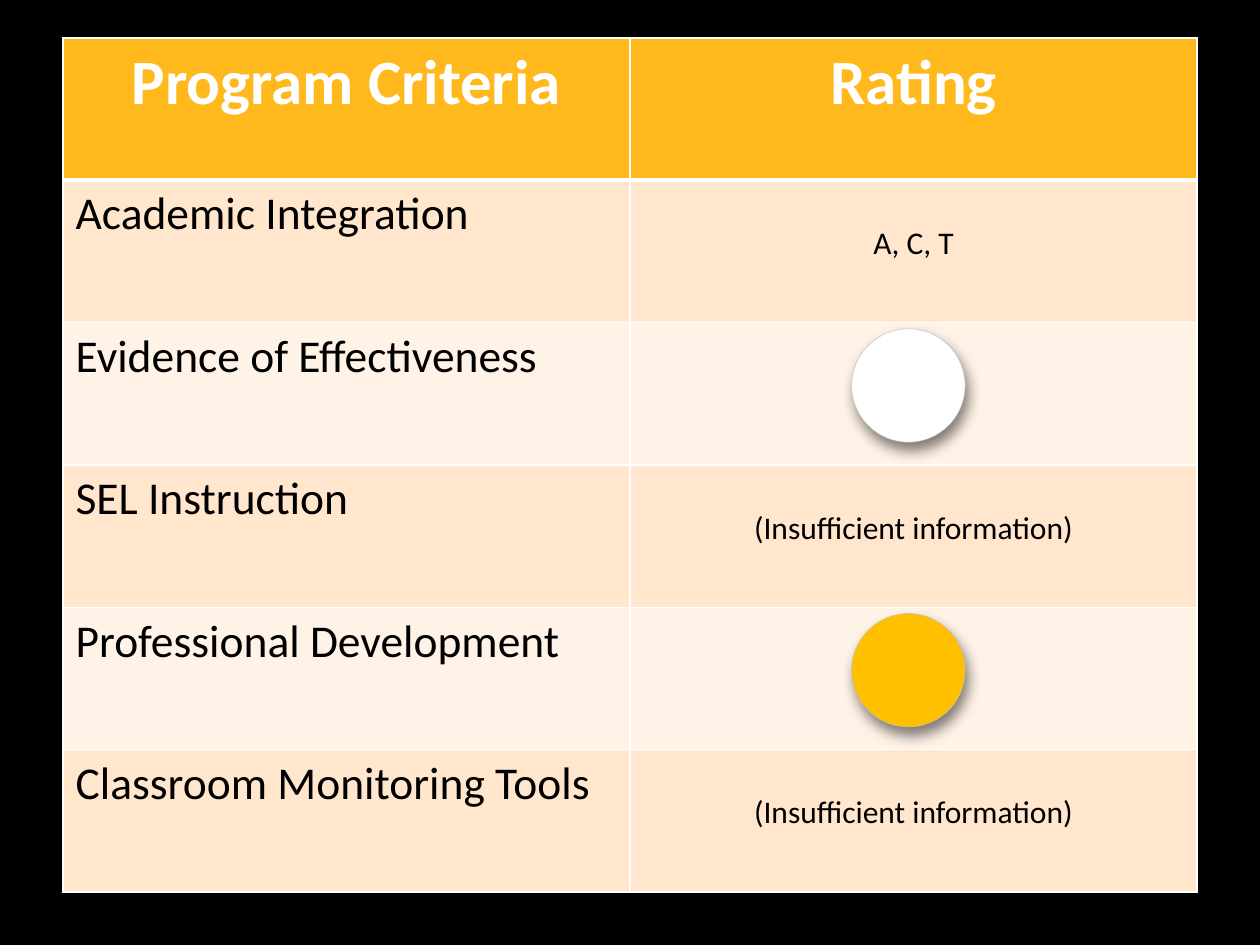
"""Build a slide with a table of program criteria and their ratings."""
import pptx
import pptx.dml.color
import pptx.enum.shapes
import pptx.enum.text
import pptx.oxml
import pptx.oxml.ns
import pptx.util

COLORS = {
    "background": "000000", "header": "FFB91D", "odd": "FFE6CC", "even": "FFF3E7",
    "white": "FFFFFF", "text": "000000", "gold": "FFC000", "outline": "BFBFBF",
}
ROWS = [
    ("Program Criteria", "Rating"),
    ("Academic Integration", "A, C, T"),
    ("Evidence of Effectiveness", ""),
    ("SEL Instruction", "(Insufficient information)"),
    ("Professional Development", ""),
    ("Classroom Monitoring Tools", "(Insufficient information)"),
]
CIRCLES = {2: "white", 4: "gold"}
LEFT, TOP, COL_W, ROW_H = 0.5, 0.3, 4.5, 1.13
DIAMETER = 0.9
NS = pptx.oxml.ns.nsdecls("a")
In, Pt = pptx.util.Inches, pptx.util.Pt


def rgb(name):
    return pptx.dml.color.RGBColor.from_string(COLORS[name])


def add_border(cell, side, width):
    cell._tc.get_or_add_tcPr().append(pptx.oxml.parse_xml(
        f'<a:ln{side} {NS} w="{Pt(width)}"><a:solidFill>'
        f'<a:srgbClr val="{COLORS["white"]}"/></a:solidFill></a:ln{side}>'))


prs = pptx.Presentation()
prs.slide_width, prs.slide_height = In(10), In(7.5)
s = prs.slides.add_slide(prs.slide_layouts[6])
s.background.fill.solid()
s.background.fill.fore_color.rgb = rgb("background")

table = s.shapes.add_table(len(ROWS), 2, In(LEFT), In(TOP),
                           In(2 * COL_W), In(len(ROWS) * ROW_H)).table
for col in table.columns:
    col.width = In(COL_W)

for i, texts in enumerate(ROWS):
    table.rows[i].height = In(ROW_H)
    header = i == 0
    for j, text in enumerate(texts):
        cell = table.cell(i, j)
        widths = {"L": 1, "R": 1, "T": 3 if i == 1 else 1, "B": 3 if header else 1}
        for side, width in widths.items():
            add_border(cell, side, width)
        cell.fill.solid()
        cell.fill.fore_color.rgb = rgb("header" if header else "odd" if i % 2 else "even")
        if not text:
            continue
        rating = j == 1 and not header
        if rating:
            cell.margin_top = In(0.35)
        p = cell.text_frame.paragraphs[0]
        if header or rating:
            p.alignment = pptx.enum.text.PP_ALIGN.CENTER
        r = p.add_run()
        r.text = text
        r.font.name = "Calibri"
        r.font.size = Pt(36 if header else 18 if rating else 26)
        r.font.bold = header
        r.font.color.rgb = rgb("white" if header else "text")

for row, color in CIRCLES.items():
    sp = s.shapes.add_shape(pptx.enum.shapes.MSO_SHAPE.OVAL, In(6.76),
                            In(TOP + row * ROW_H + 0.05), In(DIAMETER), In(DIAMETER))
    sp.fill.solid()
    sp.fill.fore_color.rgb = rgb(color)
    sp.line.color.rgb = rgb("outline")
    sp.line.width = Pt(0.25)
    sp._element.spPr.append(pptx.oxml.parse_xml(
        f'<a:effectLst {NS}><a:outerShdw blurRad="{Pt(8)}" dist="{Pt(5)}" '
        f'dir="{70 * 60000}" rotWithShape="0"><a:srgbClr val="{COLORS["background"]}">'
        '<a:alpha val="50000"/></a:srgbClr></a:outerShdw></a:effectLst>'))

prs.save("out.pptx")
